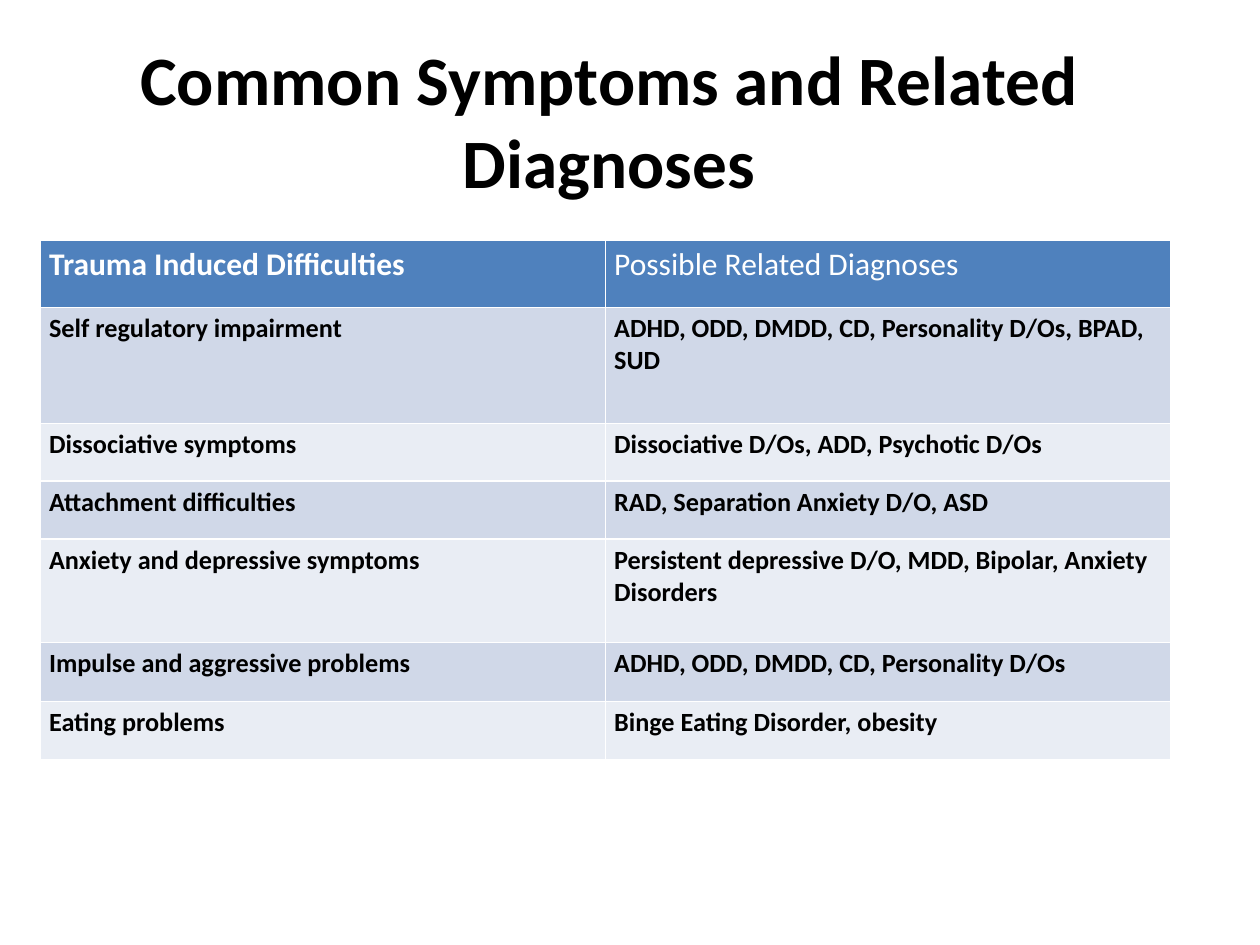
from pptx import Presentation
from pptx.dml.color import RGBColor
from pptx.enum.text import MSO_ANCHOR, PP_ALIGN
from pptx.util import Inches, Pt

BLACK = RGBColor(0x00, 0x00, 0x00)
WHITE = RGBColor(0xFF, 0xFF, 0xFF)
HEADER_BLUE = RGBColor(0x4F, 0x81, 0xBD)
BANDS = (RGBColor(0xD0, 0xD8, 0xE8), RGBColor(0xE9, 0xED, 0xF4))
FONT = "Calibri"

TITLE = "Common Symptoms and Related Diagnoses"
HEADERS = ("Trauma Induced Difficulties", "Possible Related Diagnoses")
# Row height in inches, difficulty, diagnoses
ROWS = (
    (0.92, "Self regulatory impairment",
     "ADHD, ODD, DMDD, CD, Personality D/Os, BPAD, SUD"),
    (0.46, "Dissociative symptoms", "Dissociative D/Os, ADD, Psychotic D/Os"),
    (0.46, "Attachment difficulties", "RAD, Separation Anxiety D/O, ASD"),
    (0.82, "Anxiety and depressive symptoms",
     "Persistent depressive D/O, MDD, Bipolar, Anxiety Disorders"),
    (0.47, "Impulse and aggressive problems",
     "ADHD, ODD, DMDD, CD, Personality D/Os"),
    (0.46, "Eating problems", "Binge Eating Disorder, obesity"),
)
HEADER_HEIGHT = 0.53
COLUMN_WIDTH = 4.485


def format_text(text_frame, size, color, bold=True):
    for paragraph in text_frame.paragraphs:
        for run in paragraph.runs:
            run.font.name = FONT
            run.font.size = Pt(size)
            run.font.bold = bold
            run.font.color.rgb = color


def add_title(slide):
    box = slide.shapes.add_textbox(Inches(0.35), Inches(0.4),
                                   Inches(8.97), Inches(1.09))
    text_frame = box.text_frame
    text_frame.word_wrap = True
    text_frame.vertical_anchor = MSO_ANCHOR.MIDDLE
    text_frame.text = TITLE
    text_frame.paragraphs[0].alignment = PP_ALIGN.CENTER
    format_text(text_frame, 39.6, BLACK)


def fill_cell(cell, text, fill, size, color, bold=True):
    cell.margin_left = cell.margin_right = Inches(0.07)
    cell.margin_top = cell.margin_bottom = Inches(0.04)
    cell.fill.solid()
    cell.fill.fore_color.rgb = fill
    cell.text_frame.text = text
    format_text(cell.text_frame, size, color, bold)


def add_symptom_table(slide):
    heights = [HEADER_HEIGHT] + [row[0] for row in ROWS]
    frame = slide.shapes.add_table(
        len(heights), len(HEADERS), Inches(0.32), Inches(1.91),
        Inches(COLUMN_WIDTH * len(HEADERS)), Inches(sum(heights)))
    table = frame.table
    for column in table.columns:
        column.width = Inches(COLUMN_WIDTH)
    for row, height in zip(table.rows, heights):
        row.height = Inches(height)

    for column, header in enumerate(HEADERS):
        fill_cell(table.cell(0, column), header, HEADER_BLUE, 18, WHITE,
                  bold=column == 0)
    for index, (_, *texts) in enumerate(ROWS):
        for column, text in enumerate(texts):
            fill_cell(table.cell(index + 1, column), text,
                      BANDS[index % 2], 15, BLACK)


def main():
    presentation = Presentation()
    presentation.slide_width = Inches(10)
    presentation.slide_height = Inches(7.5)
    slide = presentation.slides.add_slide(presentation.slide_layouts[6])
    add_title(slide)
    add_symptom_table(slide)
    presentation.save("out.pptx")


if __name__ == "__main__":
    main()
